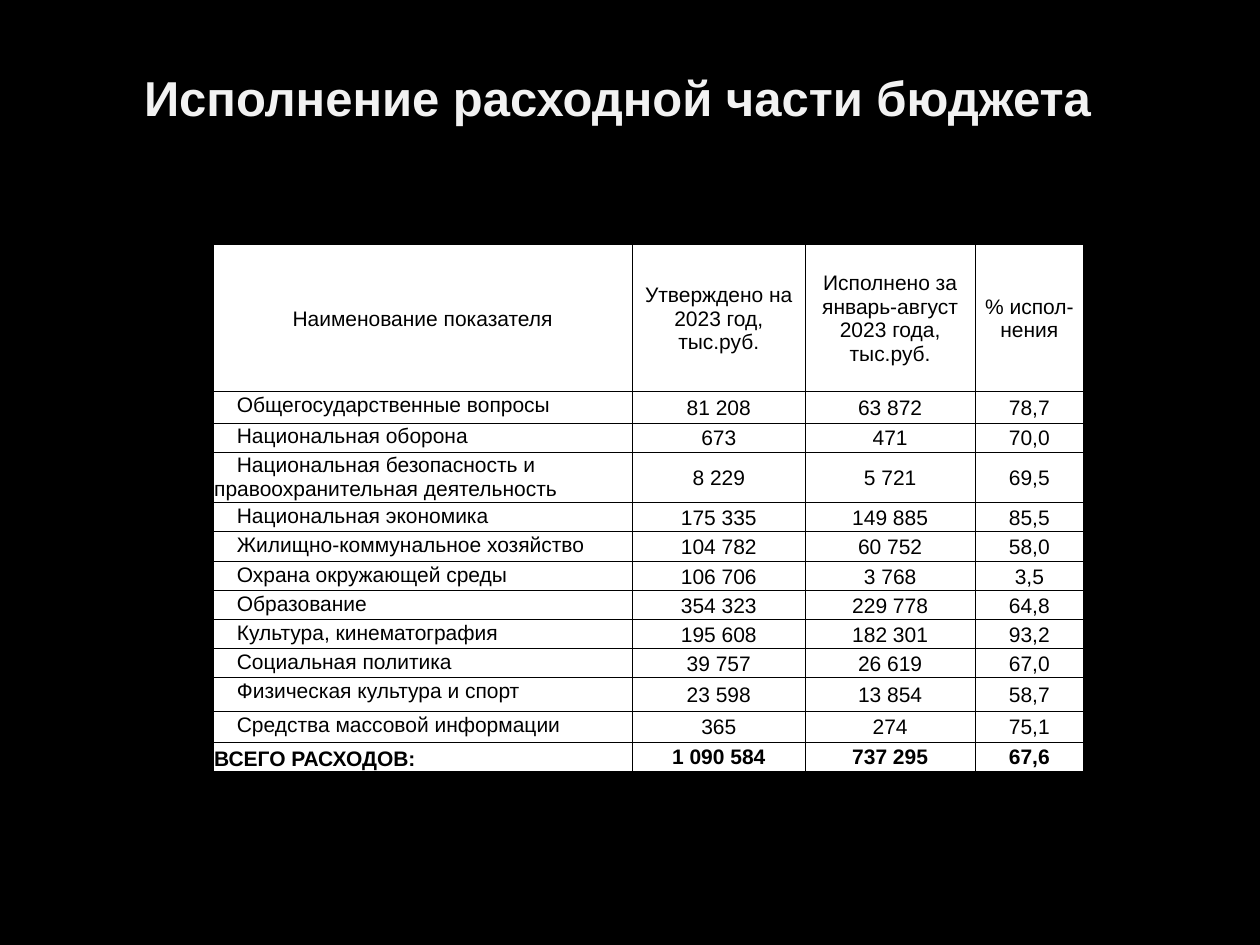
from lxml.etree import SubElement
from pptx import Presentation
from pptx.dml.color import RGBColor
from pptx.enum.text import MSO_ANCHOR as Anchor, PP_ALIGN as Align
from pptx.oxml.ns import qn
from pptx.util import Inches, Pt

BLACK = RGBColor(0x00, 0x00, 0x00)
WHITE = RGBColor(0xFF, 0xFF, 0xFF)
PALE = RGBColor(0xF2, 0xF2, 0xF2)

TITLE = "Исполнение расходной части бюджета"
HEADER = (
    "Наименование показателя",
    "Утверждено на 2023 год, тыс.руб.",
    "Исполнено за январь-август 2023 года, тыс.руб.",
    "% испол-нения",
)
EXPENSES = [
    ("Общегосударственные вопросы", "81 208", "63 872", "78,7"),
    ("Национальная оборона", "673", "471", "70,0"),
    ("Национальная безопасность и правоохранительная деятельность",
     "8 229", "5 721", "69,5"),
    ("Национальная экономика", "175 335", "149 885", "85,5"),
    ("Жилищно-коммунальное хозяйство", "104 782", "60 752", "58,0"),
    ("Охрана окружающей среды", "106 706", "3 768", "3,5"),
    ("Образование", "354 323", "229 778", "64,8"),
    ("Культура, кинематография", "195 608", "182 301", "93,2"),
    ("Социальная политика", "39 757", "26 619", "67,0"),
    ("Физическая культура и спорт", "23 598", "13 854", "58,7"),
    ("Средства массовой информации", "365", "274", "75,1"),
]
TOTAL = ("ВСЕГО РАСХОДОВ:", "1 090 584", "737 295", "67,6")
ROWS = [HEADER, *EXPENSES, TOTAL]

COLUMN_WIDTHS = (3.33, 1.37, 1.35, 0.86)
ROW_HEIGHT = 0.23
SPECIAL_HEIGHTS = {0: 1.17, 1: 0.25, 3: 0.4, 5: 0.24, 10: 0.27, 11: 0.24}
HEIGHTS = [SPECIAL_HEIGHTS.get(i, ROW_HEIGHT) for i in range(len(ROWS))]


def write(frame, text, size=12, color=BLACK, bold=False, align=Align.CENTER, indent=0):
    """Fill a text frame with one paragraph; indent moves its first line."""
    para = frame.paragraphs[0]
    para.alignment = align
    if indent:
        properties = para._p.get_or_add_pPr()
        properties.set("marL", "0")
        properties.set("indent", str(Inches(indent)))
    span = para.add_run()
    span.text = text
    span.font.name = "Arial"
    span.font.size = Pt(size)
    span.font.bold = bold
    span.font.color.rgb = color


def add_borders(cell, color=BLACK, width=0.5):
    properties = cell._tc.get_or_add_tcPr()
    for side in ("a:lnL", "a:lnR", "a:lnT", "a:lnB"):
        line = SubElement(properties, qn(side), w=str(Pt(width)))
        fill = SubElement(line, qn("a:solidFill"))
        SubElement(fill, qn("a:srgbClr"), val=str(color))


def format_cell(cell, anchor):
    cell.margin_left = cell.margin_right = cell.margin_top = Inches(0.01)
    cell.margin_bottom = 0
    cell.vertical_anchor = anchor
    add_borders(cell)
    cell.fill.solid()
    cell.fill.fore_color.rgb = WHITE


def add_title(slide):
    title = slide.shapes.title
    title.left, title.top = Inches(0.5), Inches(0.29)
    title.width, title.height = Inches(9), Inches(0.96)
    frame = title.text_frame
    frame.vertical_anchor = Anchor.MIDDLE
    frame.margin_right = Inches(0.3)
    write(frame, TITLE, size=28, color=PALE, bold=True)


def add_expense_table(slide):
    table = slide.shapes.add_table(
        len(ROWS), len(HEADER), Inches(1.69), Inches(1.94),
        Inches(sum(COLUMN_WIDTHS)), Inches(sum(HEIGHTS))).table
    table.first_row = table.horz_banding = False
    for column, width in zip(table.columns, COLUMN_WIDTHS):
        column.width = Inches(width)
    for row, height in zip(table.rows, HEIGHTS):
        row.height = Inches(height)

    last = len(ROWS) - 1
    for r, values in enumerate(ROWS):
        for c, text in enumerate(values):
            cell = table.cell(r, c)
            is_name = c == 0 and r > 0
            is_total = r == last
            anchor = Anchor.MIDDLE
            if is_name:
                anchor = Anchor.BOTTOM if is_total else Anchor.TOP
            format_cell(cell, anchor)
            write(cell.text_frame, text, bold=is_total,
                  align=Align.LEFT if is_name else Align.CENTER,
                  indent=0.18 if is_name and not is_total else 0)


def main():
    deck = Presentation()
    deck.slide_width, deck.slide_height = Inches(10), Inches(7.5)
    slide = deck.slides.add_slide(deck.slide_layouts[5])
    slide.background.fill.solid()
    slide.background.fill.fore_color.rgb = BLACK
    add_title(slide)
    add_expense_table(slide)
    deck.save("out.pptx")


if __name__ == "__main__":
    main()
